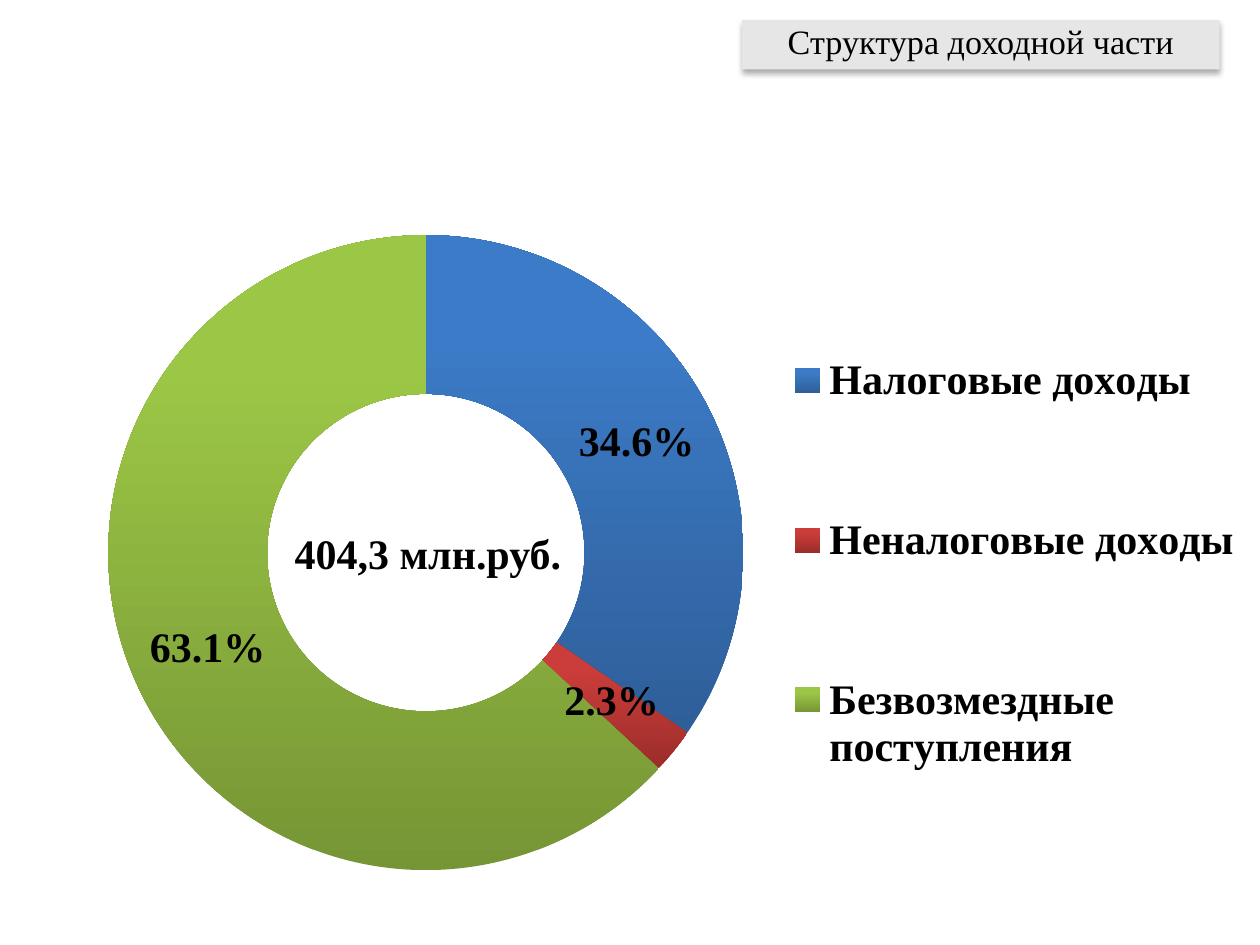
"""Build a slide with a doughnut chart of budget revenue by type."""
from lxml.etree import SubElement
from pptx import Presentation
from pptx.chart.data import CategoryChartData
from pptx.dml.color import RGBColor
from pptx.enum.chart import XL_CHART_TYPE, XL_LEGEND_POSITION
from pptx.enum.text import MSO_ANCHOR, MSO_AUTO_SIZE, PP_ALIGN
from pptx.oxml import parse_xml
from pptx.oxml.ns import nsdecls, qn
from pptx.util import Inches, Pt

FONT = "Times New Roman"
TITLE = "Структура доходной части"
TOTAL = "404,3 млн.руб."
REVENUES = [
    ("Налоговые доходы", 34.6, "2E5F99", "3C7BC7"),
    ("Неналоговые доходы", 2.3, "9B2D2A", "CB3D3A"),
    ("Безвозмездные поступления", 63.1, "769535", "9CC746"),
]
PLOT_LAYOUT = {"x": 0.086, "y": 0.078, "w": 0.504, "h": 0.825}
LEGEND_LAYOUT = {"x": 0.62, "y": 0.09, "w": 0.37, "h": 0.83}


def color(value):
    return RGBColor.from_string(value)


def style_font(font, size, bold):
    font.name, font.size, font.bold = FONT, Pt(size), bold
    font.color.rgb = color("000000")


def write_text(shape, text, size=24, bold=False, align=PP_ALIGN.LEFT,
               anchor=MSO_ANCHOR.TOP, spacing=1.0, fit=MSO_AUTO_SIZE.NONE):
    frame = shape.text_frame
    frame.word_wrap, frame.auto_size, frame.vertical_anchor = True, fit, anchor
    paragraph = frame.paragraphs[0]
    paragraph.alignment, paragraph.line_spacing = align, spacing
    run = paragraph.add_run()
    run.text = text
    style_font(run.font, size, bold)


def add_title(slide):
    title = slide.shapes.title
    title.left, title.top = Inches(5.89), Inches(0.16)
    title.width, title.height = Inches(3.79), Inches(0.39)
    title.fill.solid()
    title.fill.fore_color.rgb = color("E6E6E6")
    title._element.spPr.append(parse_xml(
        f'<a:effectLst {nsdecls("a")}><a:outerShdw blurRad="44450" dist="27940" '
        'dir="5400000" algn="ctr" rotWithShape="0"><a:srgbClr val="000000">'
        '<a:alpha val="32000"/></a:srgbClr></a:outerShdw></a:effectLst>'))
    write_text(title, TITLE, size=19.5, align=PP_ALIGN.CENTER,
               anchor=MSO_ANCHOR.MIDDLE, spacing=0.8)


def set_layout(element, bounds, inner=False):
    layout = element.get_or_add_layout() if hasattr(element, "get_or_add_layout") else None
    if layout is None:
        layout = element.find(qn("c:layout"))
    if layout is None:
        layout = SubElement(element, qn("c:layout"))
        element.insert(1 if element.tag == qn("c:legend") else 0, layout)
    for child in list(layout):
        layout.remove(child)
    manual = SubElement(layout, qn("c:manualLayout"))
    settings = {"layoutTarget": "inner"} if inner else {}
    settings.update(xMode="edge", yMode="edge", **bounds)
    for name, value in settings.items():
        SubElement(manual, qn(f"c:{name}")).set("val", str(value))


def add_revenue_chart(slide):
    names, values, *_ = zip(*REVENUES)
    data = CategoryChartData()
    data.categories = names
    data.add_series("Series 1", values)
    chart = slide.shapes.add_chart(
        XL_CHART_TYPE.DOUGHNUT, Inches(0), Inches(1.39), Inches(10), Inches(6.11), data).chart
    style_font(chart.font, 24, True)
    chart.has_title = False
    chart.has_legend = True
    chart.legend.position = XL_LEGEND_POSITION.RIGHT
    chart.legend.include_in_layout = False
    plot = chart.plots[0]
    plot.vary_by_categories = True
    plot._element.find(qn("c:holeSize")).set("val", "50")
    series = plot.series[0]
    for index, (_, _, dark, light) in enumerate(REVENUES):
        point_format = series.points[index].format
        point_format.line.fill.background()
        fill = point_format.fill
        fill.gradient()
        fill.gradient_angle = 90
        for stop, shade, position in zip(fill.gradient_stops, (dark, light), (0, 0.8)):
            stop.color.rgb, stop.position = color(shade), position
    labels = series.data_labels
    labels.show_percentage, labels.show_value = True, False
    labels.show_legend_key = False
    labels.number_format, labels.number_format_is_linked = "0.0%", False
    style_font(labels.font, 24, True)
    set_layout(chart._chartSpace.chart.plotArea, PLOT_LAYOUT, inner=True)
    set_layout(chart.legend._element, LEGEND_LAYOUT)


def main():
    presentation = Presentation()
    presentation.slide_width, presentation.slide_height = Inches(10), Inches(7.5)
    slide = presentation.slides.add_slide(presentation.slide_layouts[5])
    add_title(slide)
    add_revenue_chart(slide)
    total = slide.shapes.add_textbox(Inches(2.24), Inches(4.14), Inches(2.99), Inches(0.5))
    write_text(total, TOTAL, bold=True, fit=MSO_AUTO_SIZE.SHAPE_TO_FIT_TEXT)
    presentation.save("out.pptx")


if __name__ == "__main__":
    main()
